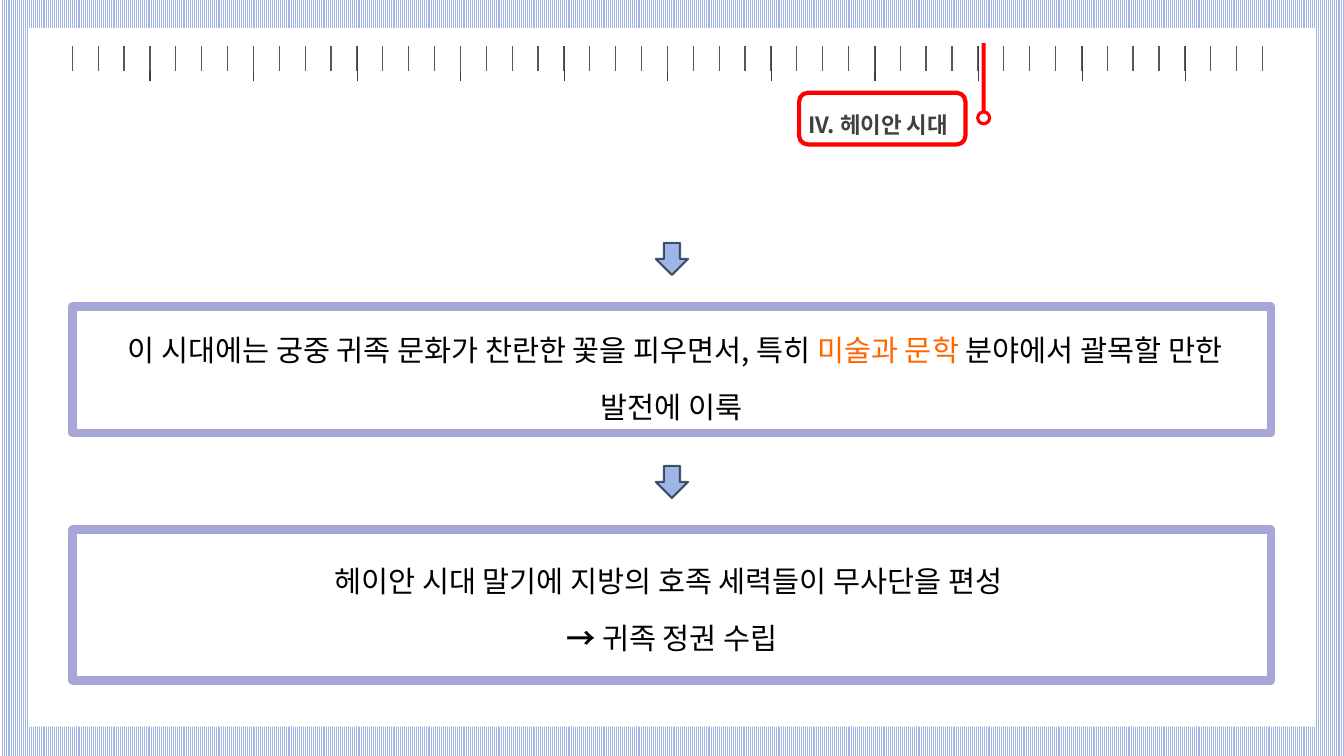
import lxml.etree
import pptx
import pptx.dml.color
import pptx.enum.dml
import pptx.enum.shapes
import pptx.enum.text
import pptx.oxml
import pptx.oxml.ns
import pptx.util

Cm = pptx.util.Cm
Pt = pptx.util.Pt
SHAPES = pptx.enum.shapes.MSO_SHAPE
qn = pptx.oxml.ns.qn

FONT = "Noto Sans CJK KR"
NO_TABLE_STYLE = "{2D5ABB26-0587-4C30-8999-92F81FD0307C}"
BLACK, WHITE, RED = "000000", "FFFFFF", "FF0000"
SKY, LAVENDER, NAVY, ORANGE, GRAY = "A0B4E6", "A6A7D8", "172D48", "FF6600", "404040"


def color(hex_code):
    """Turn a hex string into a colour."""
    return pptx.dml.color.RGBColor.from_string(hex_code)


def add_figure(slide, kind, left, top, width, height, fill=None, line=None, weight=1):
    """Draw a flat preset shape; lengths are in centimetres."""
    figure = slide.shapes.add_shape(kind, Cm(left), Cm(top), Cm(width), Cm(height))
    figure.shadow.inherit = False
    if fill:
        figure.fill.solid()
        figure.fill.fore_color.rgb = color(fill)
    else:
        figure.fill.background()
    if line:
        figure.line.color.rgb = color(line)
        figure.line.width = Pt(weight)
    else:
        figure.line.fill.background()
    return figure


def add_text(slide, left, top, width, height, paragraphs, size=21, spacing=1.6,
             ink=BLACK):
    """Write centred paragraphs, each a list of (text, hex colour or None, bold)."""
    frame = slide.shapes.add_textbox(Cm(left), Cm(top), Cm(width), Cm(height)).text_frame
    frame.word_wrap = True
    for index, pieces in enumerate(paragraphs):
        paragraph = frame.paragraphs[0] if index == 0 else frame.add_paragraph()
        paragraph.alignment = pptx.enum.text.PP_ALIGN.CENTER
        paragraph.line_spacing = spacing
        for words, accent, bold in pieces:
            run = paragraph.add_run()
            run.text = words
            run.font.name = FONT
            run.font.size = Pt(size)
            run.font.bold = bold
            run.font.color.rgb = color(accent or ink)
            east_asian = lxml.etree.SubElement(run.font._element, qn("a:ea"))
            east_asian.set("typeface", FONT)


def add_tick(cell, side, ink):
    """Give one side of a cell a one-point border."""
    border = pptx.oxml.parse_xml(
        f'<a:{side} xmlns:a="http://schemas.openxmlformats.org/drawingml/2006/main" '
        f'w="12700"><a:solidFill><a:srgbClr val="{ink}"/></a:solidFill></a:{side}>')
    cell._tc.get_or_add_tcPr().insert(0, border)


def add_ticks(slide, left, top, width, height, count, ink):
    """Draw evenly spaced ticks as the inner borders of a one-row table."""
    ruler = slide.shapes.add_table(1, count, Cm(left), Cm(top), Cm(width), Cm(height)).table
    ruler.first_row = ruler.horz_banding = False
    ruler._tbl.tblPr.find(qn("a:tableStyleId")).text = NO_TABLE_STYLE
    for index in range(count):
        ruler.columns[index].width = Cm(width / count)
        cell = ruler.cell(0, index)
        cell.margin_left = cell.margin_right = cell.margin_top = cell.margin_bottom = 0
        cell.fill.background()
        end_mark = lxml.etree.SubElement(
            cell.text_frame.paragraphs[0]._p, qn("a:endParaRPr"))
        end_mark.set("sz", "100")
        if index < count - 1:
            add_tick(cell, "lnR", ink)
        if index > 0:
            add_tick(cell, "lnL", ink)


def add_ruler(slide, left, top, width):
    """Draw the long and short ticks along the top."""
    add_ticks(slide, left, top, width, 0.86, 12, GRAY)
    add_ticks(slide, left, top, width, 0.62, 48, "595959")


def add_chapter_tag(slide, left, top, width, height):
    """Draw the red pin and the framed chapter title."""
    pin = left + width + 0.46
    add_figure(slide, SHAPES.RECTANGLE, pin - 0.05, top - 1.25, 0.1, 1.8, fill=RED)
    add_figure(slide, SHAPES.OVAL, pin - 0.15, top + 0.48, 0.3, 0.3, WHITE, RED, 2.25)
    add_figure(slide, SHAPES.ROUNDED_RECTANGLE, left, top, width, height,
               line=RED, weight=3)
    add_text(slide, left - 0.2, top, width + 0.2, height,
             [[("IV. 헤이안 시대", None, True)]], size=16, spacing=1.5, ink=GRAY)


def add_step(slide, left, top, width, height, paragraphs, inset=0):
    """Draw a framed statement with a down arrow above it."""
    add_figure(slide, SHAPES.RECTANGLE, left, top, width, height,
               line=LAVENDER, weight=6)
    arrow = add_figure(slide, SHAPES.DOWN_ARROW, left + width / 2 - 0.4, top - 1.6,
                       0.81, 0.81, SKY, NAVY, 1.5)
    ink = arrow.line._ln.find(".//" + qn("a:srgbClr"))
    lxml.etree.SubElement(ink, qn("a:alpha")).set("val", "78000")
    add_text(slide, left, top + inset, width, 3.12, paragraphs)


def main():
    """Build the slide and save it."""
    deck = pptx.Presentation()
    deck.slide_width, deck.slide_height = Cm(33.87), Cm(19.05)
    slide = deck.slides.add_slide(deck.slide_layouts[6])
    stripes = slide.background.fill
    stripes.patterned()
    stripes.pattern = pptx.enum.dml.MSO_PATTERN.NARROW_VERTICAL
    stripes.fore_color.rgb = color(SKY)
    stripes.back_color.rgb = color(WHITE)

    add_figure(slide, SHAPES.RECTANGLE, 0.71, 0.71, 32.44, 17.6, fill=WHITE)
    add_ruler(slide, 1.17, 1.17, 31.32)
    add_chapter_tag(slide, 20.14, 2.34, 4.19, 1.3)
    add_step(slide, 1.83, 7.72, 30.2, 3.2, [
        [(" 이 시대에는 궁중 귀족 문화가 찬란한 꽃을 피우면서, 특히 ", None, False),
         ("미술과 문학", ORANGE, False),
         (" 분야에서 괄목할 만한 발전에 이룩", None, False)]])
    add_step(slide, 1.83, 13.34, 30.2, 3.81, [
        [("헤이안 시대 말기에 지방의 호족 세력들이 무사단을 편성 ", None, False)],
        [("→ ", None, True), ("귀족 정권 수립", None, False)]], inset=0.2)
    deck.save("out.pptx")


if __name__ == "__main__":
    main()
